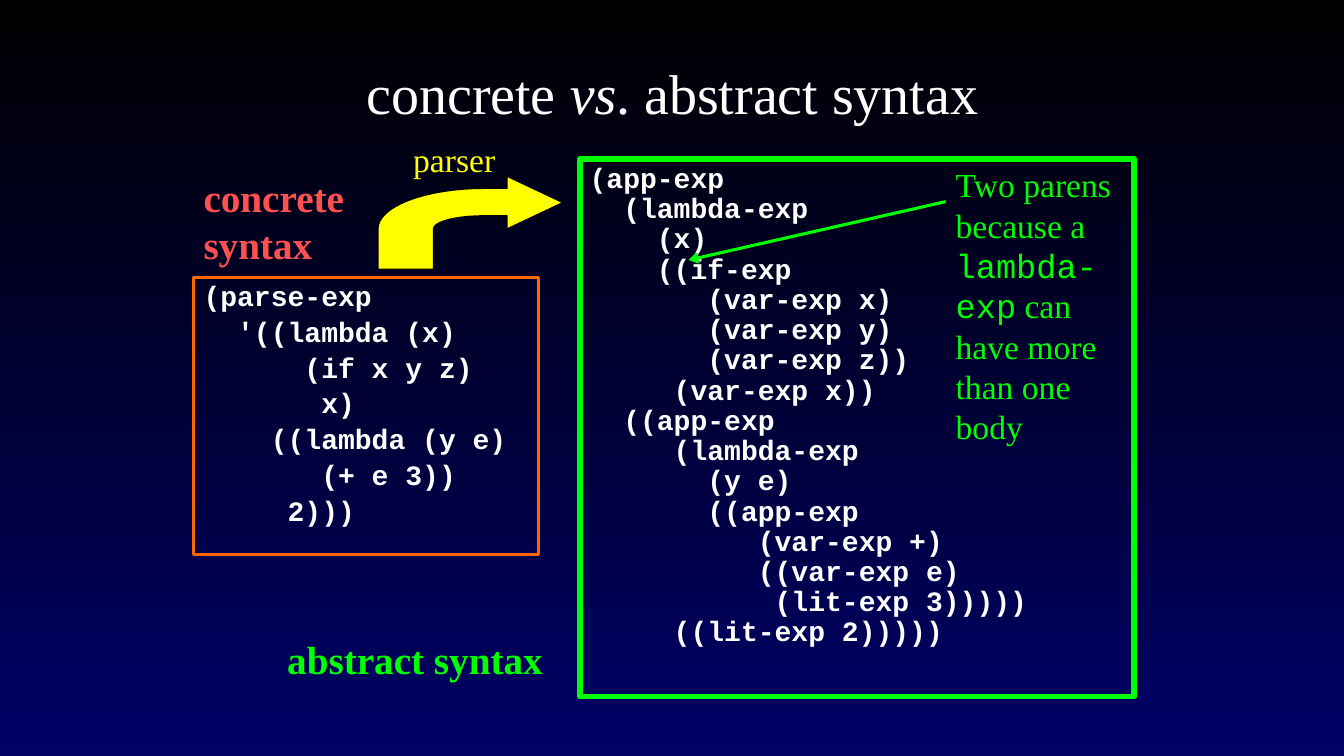
from math import cos, pi, sin

from lxml import etree
from pptx import Presentation
from pptx.dml.color import RGBColor
from pptx.enum.shapes import MSO_CONNECTOR, MSO_SHAPE
from pptx.enum.text import MSO_ANCHOR, PP_ALIGN
from pptx.oxml.ns import qn
from pptx.util import Inches, Pt

STRAIGHT = MSO_CONNECTOR.STRAIGHT
RECTANGLE = MSO_SHAPE.RECTANGLE
TOP, MIDDLE = MSO_ANCHOR.TOP, MSO_ANCHOR.MIDDLE
LEFT, CENTER = PP_ALIGN.LEFT, PP_ALIGN.CENTER

BLACK = RGBColor(0x00, 0x00, 0x00)
NAVY = RGBColor(0x00, 0x00, 0x66)
WHITE = RGBColor(0xFF, 0xFF, 0xFF)
ORANGE = RGBColor(0xFF, 0x66, 0x00)
GREEN = RGBColor(0x00, 0xFF, 0x00)
YELLOW = RGBColor(0xFF, 0xFF, 0x00)
RED = RGBColor(0xFF, 0x50, 0x50)

SERIF = "Times New Roman"
MONO = "Courier New"

CONCRETE_CODE = """(parse-exp
  '((lambda (x)
      (if x y z)
       x)
    ((lambda (y e)
       (+ e 3))
     2)))"""

ABSTRACT_CODE = """(app-exp
  (lambda-exp
    (x)
    ((if-exp
       (var-exp x)
       (var-exp y)
       (var-exp z))
     (var-exp x))
  ((app-exp
     (lambda-exp
       (y e)
       ((app-exp
          (var-exp +)
          ((var-exp e)
           (lit-exp 3)))))
     ((lit-exp 2)))))"""


def quarter_arc(center_x, center_y, radius_x, radius_y, steps=16):
    """Return points from the left end of an ellipse quarter up to its top."""
    angles = [pi / 2 * step / steps for step in range(steps + 1)]
    return [(center_x - radius_x * cos(angle), center_y - radius_y * sin(angle))
            for angle in angles]


class SyntaxSlide:
    """Draws the elements of the syntax comparison on one slide."""

    def __init__(self, presentation):
        self.slide = presentation.slides.add_slide(presentation.slide_layouts[6])
        self.shapes = self.slide.shapes

    def background(self, top_color, bottom_color):
        """Fill the background with a vertical gradient."""
        fill = self.slide.background.fill
        fill.gradient()
        fill.gradient_angle = 270
        for stop, color, position in zip(fill.gradient_stops, (top_color, bottom_color), (0, 1)):
            stop.color.rgb = color
            stop.position = position

    def text(self, box, runs, size, color, bold=False, align=LEFT, anchor=TOP, shapes=None):
        """Add a wrapped label made of (text, font, italic) runs."""
        shape = (shapes or self.shapes).add_textbox(*map(Inches, box))
        frame = shape.text_frame
        frame.word_wrap = True
        frame.vertical_anchor = anchor
        paragraph = frame.paragraphs[0]
        paragraph.alignment = align
        for content, name, italic in runs:
            run = paragraph.add_run()
            run.text = content
            font = run.font
            font.name, font.size, font.bold, font.italic = name, Pt(size), bold, italic
            font.color.rgb = color

    def code(self, box, source, line_color, line_width, space_before=0):
        """Add an outlined code listing, one paragraph per line."""
        shape = self.shapes.add_shape(RECTANGLE, *map(Inches, box))
        shape.shadow.inherit = False
        shape.fill.background()
        shape.line.color.rgb = line_color
        shape.line.width = Pt(line_width)
        frame = shape.text_frame
        frame.vertical_anchor = TOP
        frame.text = source
        for index, paragraph in enumerate(frame.paragraphs):
            paragraph.alignment = LEFT
            paragraph.line_spacing = 0.9
            paragraph.space_before = Pt(space_before if index else 0)
            font = paragraph.runs[0].font
            font.name, font.size, font.bold = MONO, Pt(20), True
            font.color.rgb = WHITE

    def bent_arrow(self, left, bottom, tip, color):
        """Add a block arrow that rises and bends to the right."""
        tip_x, tip_y = tip
        bend_x, bend_y, neck_x = 4.8, 2.27, 5.03
        outer = quarter_arc(bend_x, bend_y, bend_x - left, 0.4)
        inner = quarter_arc(bend_x, bend_y, 0.5, 0.13)
        points = [(left, bottom), *outer, (neck_x, 1.87), (neck_x, 1.75), (tip_x, tip_y),
                  (neck_x, 2.27), (neck_x, 2.14), *reversed(inner), (bend_x - 0.5, bottom)]
        points = [(Inches(x), Inches(y)) for x, y in points]
        builder = self.shapes.build_freeform(*points[0])
        builder.add_line_segments(points[1:], close=True)
        shape = builder.convert_to_shape()
        shape.shadow.inherit = False
        shape.fill.solid()
        shape.fill.fore_color.rgb = color
        shape.line.color.rgb = BLACK
        shape.line.width = Pt(0.75)

    def pointer(self, start, end, color, shapes):
        """Add a straight line with an arrowhead at its end."""
        connector = shapes.add_connector(STRAIGHT, *map(Inches, (*start, *end)))
        connector.line.color.rgb = color
        connector.line.width = Pt(2.25)
        etree.SubElement(connector.line._get_or_add_ln(), qn("a:tailEnd"), type="arrow")
        etree.SubElement(connector._element.spPr, qn("a:effectLst"))

    def note(self, box, runs, start, end, color):
        """Add a grouped remark with its pointer."""
        shapes = self.shapes.add_group_shape().shapes
        self.text(box, runs, 24, color, shapes=shapes)
        self.pointer(start, end, color, shapes)


def main():
    """Build and save the slide."""
    presentation = Presentation()
    presentation.slide_width = Inches(13.33)
    presentation.slide_height = Inches(7.5)
    slide = SyntaxSlide(presentation)
    slide.background(BLACK, NAVY)
    title = [("concrete ", SERIF, False), ("vs", SERIF, True), (". abstract syntax", SERIF, False)]
    slide.text((2.42, 0.58, 8.5, 0.67), title, 40, WHITE, align=CENTER, anchor=MIDDLE)
    slide.code((1.92, 2.75, 3.42, 2.75), CONCRETE_CODE, ORANGE, 2.25, space_before=4)
    slide.code((5.75, 1.58, 5.5, 5.33), ABSTRACT_CODE, GREEN, 4)
    slide.bent_arrow(3.75, 2.67, (5.58, 2.01), YELLOW)
    slide.text((1.92, 1.67, 1.92, 1.04), [("concrete syntax", SERIF, False)], 28, RED, bold=True)
    slide.text((2.75, 6.25, 3.08, 0.57), [("abstract syntax", SERIF, False)], 28, GREEN, bold=True)
    remark = [("Two parens because a ", SERIF, False), ("lambda-exp", MONO, False),
              (" can have more than one body", SERIF, False)]
    slide.note((9.38, 1.58, 1.92, 2.93), remark, (9.38, 2), (6.83, 2.58), GREEN)
    slide.text((4, 1.33, 1.17, 0.5), [("parser", SERIF, False)], 24, YELLOW)
    presentation.save("out.pptx")


if __name__ == "__main__":
    main()
